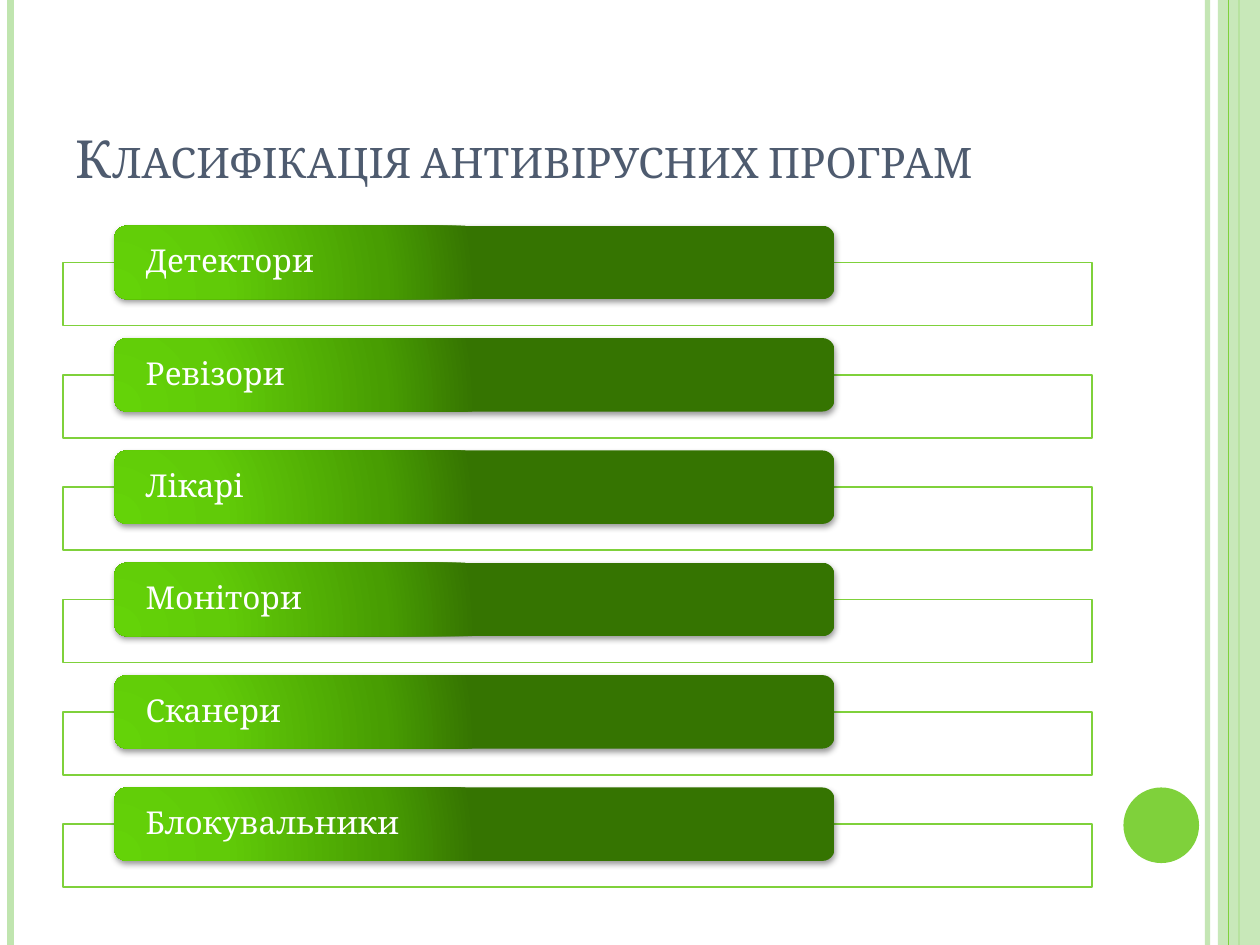
from lxml import etree
from pptx import Presentation
from pptx.dml.color import RGBColor
from pptx.enum.shapes import MSO_CONNECTOR, MSO_SHAPE
from pptx.enum.text import MSO_ANCHOR, MSO_AUTO_SIZE, PP_ALIGN
from pptx.oxml import parse_xml
from pptx.oxml.ns import nsdecls, qn
from pptx.util import Inches, Pt

LINE = MSO_CONNECTOR.STRAIGHT
RECT, ROUND, OVAL = MSO_SHAPE.RECTANGLE, MSO_SHAPE.ROUNDED_RECTANGLE, MSO_SHAPE.OVAL
LEFT = PP_ALIGN.LEFT
MIDDLE, BOTTOM = MSO_ANCHOR.MIDDLE, MSO_ANCHOR.BOTTOM
NO_FIT = MSO_AUTO_SIZE.NONE

WHITE = RGBColor(0xFF, 0xFF, 0xFF)
SLATE = RGBColor(0x4E, 0x5B, 0x6F)
GREEN = RGBColor(0x7F, 0xD1, 0x3B)
PALE = RGBColor(0xC0, 0xE5, 0xAF)
GLOW = (
    (0, RGBColor(0x64, 0xD3, 0x08)),
    (30, RGBColor(0x61, 0xCB, 0x08)),
    (75, RGBColor(0x48, 0x9D, 0x02)),
    (100, RGBColor(0x35, 0x74, 0x01)),
)

COLS, ROWS = 120, 90
TITLE = "Класифікація антивірусних програм"
KINDS = ("Детектори", "Ревізори", "Лікарі", "Монітори", "Сканери", "Блокувальники")
STRIPES = ((115, PALE, 3, 93), (1, PALE, 4.5, 100), (118, GREEN, 1.5, 100))
FIRST, PITCH = 21.5, 10.7


class Deck:
    """Holds the style and the current slide; places are grid columns and rows."""

    font = "Cambria"

    def __init__(self):
        self.prs = Presentation()
        self.prs.slide_width, self.prs.slide_height = Inches(10), Inches(7.5)
        self.slide = self.prs.slides.add_slide(self.prs.slide_layouts[5])

    def grid(self, *cells):
        units = self.prs.slide_width / COLS, self.prs.slide_height / ROWS
        return [round(cell * units[i % 2]) for i, cell in enumerate(cells)]

    def fade(self, fill, alpha):
        """Set the opacity, in percent, of a solid fill's colour element."""
        color = fill.find(".//" + qn("a:srgbClr"))
        etree.SubElement(color, qn("a:alpha")).set("val", str(alpha * 1000))

    def set_text(self, para, text, size, color):
        para.text, para.alignment = text, LEFT
        para.font.name, para.font.size = self.font, Pt(size)
        para.font.color.rgb = color

    def title(self, text, *cells):
        box = self.slide.shapes.title
        box.left, box.top, box.width, box.height = self.grid(*cells)
        frame = box.text_frame
        frame.vertical_anchor, frame.auto_size = BOTTOM, NO_FIT
        para = frame.paragraphs[0]
        self.set_text(para, text, 30, SLATE)
        para.runs[0].font._element.set("cap", "small")

    def stripe(self, col, color, width, alpha=100):
        """Draw a line down the whole slide."""
        line = self.slide.shapes.add_connector(LINE, *self.grid(col, 0, col, ROWS))
        line.line.color.rgb, line.line.width = color, Pt(width)
        props = line._element.spPr
        if alpha < 100:
            self.fade(props.find(qn("a:ln")), alpha)
        etree.SubElement(props, qn("a:effectLst"))

    def shape(self, kind, cells, color, alpha=100, edge=None):
        item = self.slide.shapes.add_shape(kind, *self.grid(*cells))
        item.shadow.inherit = False
        item.fill.solid()
        item.fill.fore_color.rgb = color
        if alpha < 100:
            self.fade(item._element.spPr.find(qn("a:solidFill")), alpha)
        if edge is None:
            item.line.fill.background()
        else:
            item.line.color.rgb, item.line.width = edge, Pt(1)
        return item

    def glow(self, item):
        """Give a shape the radial green fill and a soft shadow."""
        stops = "".join(
            f'<a:gs pos="{pos * 1000}"><a:srgbClr val="{color}"/></a:gs>'
            for pos, color in GLOW
        )
        props = item._element.spPr
        props.replace(props.find(qn("a:solidFill")), parse_xml(
            f'<a:gradFill {nsdecls("a")} rotWithShape="1"><a:gsLst>{stops}</a:gsLst>'
            '<a:path path="circle"><a:fillToRect l="5000" t="100000" r="120000" '
            'b="10000"/></a:path></a:gradFill>'))
        props.find(qn("a:effectLst")).append(parse_xml(
            f'<a:outerShdw {nsdecls("a")} blurRad="{Pt(4)}" dist="{Pt(1.6)}" '
            'dir="5400000" rotWithShape="0"><a:srgbClr val="000000">'
            '<a:alpha val="42000"/></a:srgbClr></a:outerShdw>'))

    def label(self, text, *cells):
        item = self.shape(ROUND, cells, GREEN)
        self.glow(item)
        frame = item.text_frame
        frame.word_wrap, frame.vertical_anchor = True, MIDDLE
        frame.margin_left = frame.margin_right = Inches(0.22)
        frame.margin_top = frame.margin_bottom = 0
        para = frame.paragraphs[0]
        para.line_spacing = 0.9
        self.set_text(para, text, 18, WHITE)


def main():
    deck = Deck()
    for stripe in STRIPES:
        deck.stripe(*stripe)
    deck.shape(RECT, (116, 0, 4, ROWS), PALE, alpha=87)
    deck.stripe(117, GREEN, 0.75)
    deck.shape(OVAL, (107, 75, 7.2, 7.2), GREEN)

    deck.title(TITLE, 6, 3.6, 98, 15)
    for i, kind in enumerate(KINDS):
        top = FIRST + i * PITCH
        deck.shape(RECT, (6, top + 3.5, 98, 6), WHITE, alpha=90, edge=GREEN)
        deck.label(kind, 10.9, top, 68.6, 7)
    deck.prs.save("out.pptx")


if __name__ == "__main__":
    main()
